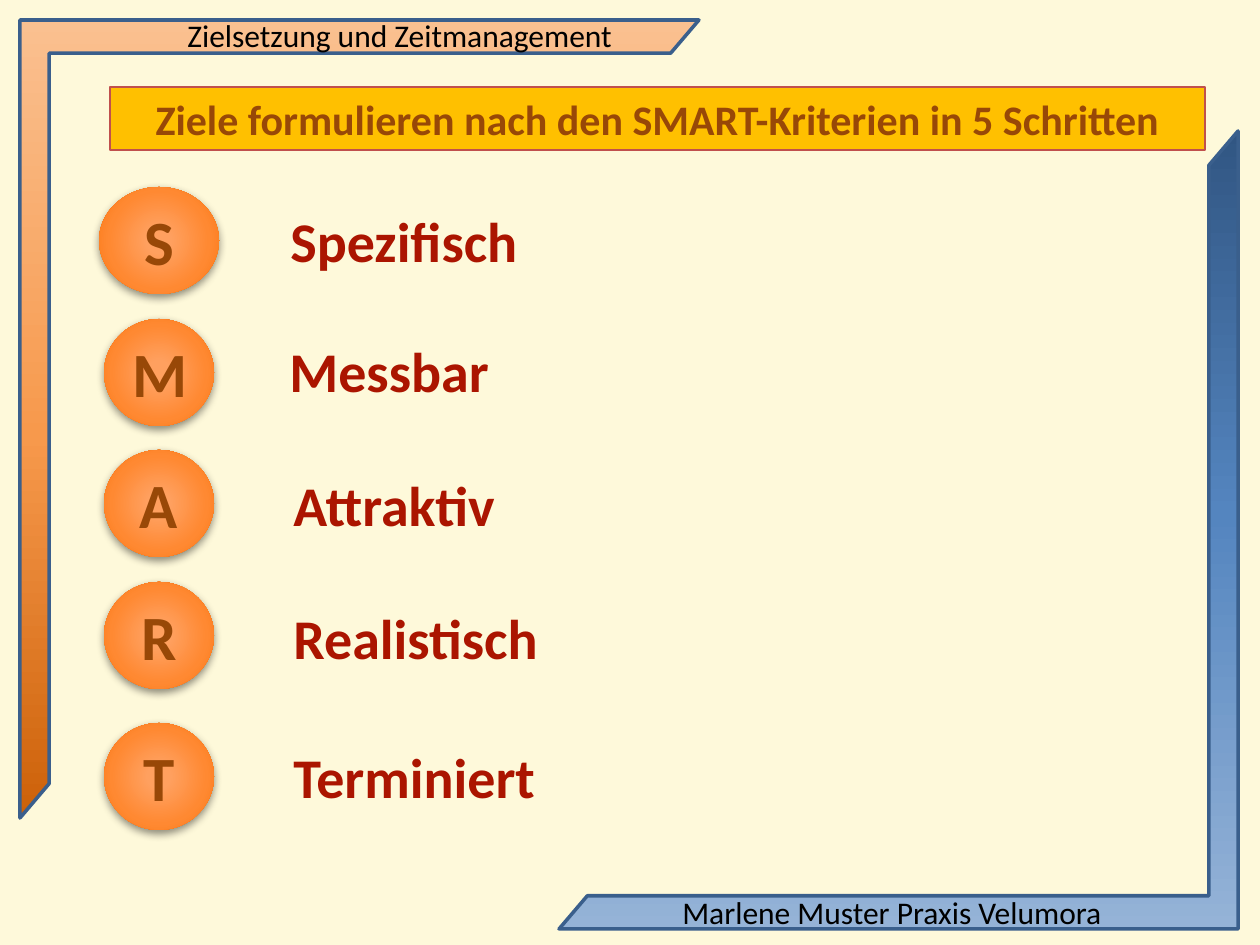
from lxml import etree
from pptx import Presentation
from pptx import util as u
from pptx.dml.color import RGBColor
from pptx.enum import shapes, text
from pptx.oxml import ns

PX = 914400 / 126
FONT = "Calibri"
CREAM, BLACK, BROWN, RED = "FEF9DA", "000000", "984807", "AB1500"
FRAME_LINE = "3A5F8C"
ORANGE_FADE = [(0, "CC6109"), (48, "F7994C"), (100, "FAC090")]
BLUE_FADE = [(0, "315683"), (48, "5485BF"), (100, "95B3D7")]
BALL_FADE = [(0, "FFA061"), (15, "FFA05F"), (62, "FF8932"),
             (97, "FA7712"), (100, "FB7507")]


def px(*lengths):
    return [u.Emu(round(length * PX)) for length in lengths]


def color(value):
    return RGBColor.from_string(value)


def add_xml(parent, tag, **attributes):
    child = etree.SubElement(parent, ns.qn(tag))
    for name, value in attributes.items():
        child.set(name, str(value))
    return child


def write(shape, words, size, tint, bold=False, align=text.PP_ALIGN.LEFT,
          anchor=text.MSO_ANCHOR.TOP, wrap=True):
    frame = shape.text_frame
    frame.word_wrap = wrap
    frame.vertical_anchor = anchor
    paragraph = frame.paragraphs[0]
    paragraph.alignment = align
    run = paragraph.add_run()
    run.text = words
    run.font.name, run.font.size, run.font.bold = FONT, u.Pt(size), bold
    run.font.color.rgb = color(tint)


def fade(shape, stops, radial=False):
    """Fill from bottom to top, or from the centre outwards."""
    shape.fill.background()
    properties = shape.element.spPr
    old = properties.find(ns.qn("a:noFill"))
    gradient = etree.Element(ns.qn("a:gradFill"), rotWithShape="1")
    properties.replace(old, gradient)
    stop_list = add_xml(gradient, "a:gsLst")
    for position, tint in stops:
        stop = add_xml(stop_list, "a:gs", pos=position * 1000)
        add_xml(stop, "a:srgbClr", val=tint)
    if radial:
        circle = add_xml(gradient, "a:path", path="circle")
        add_xml(circle, "a:fillToRect", l=50000, t=50000, r=50000, b=50000)
    else:
        add_xml(gradient, "a:lin", ang=270 * 60000, scaled=0)


def drop_shadow(shape):
    effects = shape.element.spPr.find(ns.qn("a:effectLst"))
    shadow = add_xml(effects, "a:outerShdw", blurRad=u.Pt(5), dist=u.Pt(2),
                     dir=90 * 60000, rotWithShape=0)
    tint = add_xml(shadow, "a:srgbClr", val=BLACK)
    add_xml(tint, "a:alpha", val=43000)


class SlideBuilder:
    """Holds the current slide and draws its elements in one style."""

    def __init__(self, presentation):
        self.slide = presentation.slides.add_slide(presentation.slide_layouts[6])
        background = self.slide.background.fill
        background.solid()
        background.fore_color.rgb = color(CREAM)

    def shape(self, kind, box, line=None, width=1):
        shape = self.slide.shapes.add_shape(kind, *px(*box))
        shape.shadow.inherit = False
        if line:
            shape.line.color.rgb = color(line)
            shape.line.width = u.Pt(width)
        else:
            shape.line.fill.background()
        return shape

    def corner(self, left, top, stops, rotation=0):
        frame = self.shape(shapes.MSO_SHAPE.HALF_FRAME, (left, top, 679, 798),
                           FRAME_LINE, 2)
        frame.adjustments[0], frame.adjustments[1] = 0.049, 0.043
        frame.rotation = rotation
        fade(frame, stops)

    def label(self, words, box, size, tint, bold=False):
        label = self.slide.shapes.add_textbox(*px(*box))
        write(label, words, size, tint, bold, wrap=False)

    def title(self, words):
        bar = self.shape(shapes.MSO_SHAPE.RECTANGLE, (110, 87, 1095, 63),
                         "C0504D", 1.25)
        bar.fill.solid()
        bar.fill.fore_color.rgb = color("FFC000")
        write(bar, words, 24, BROWN, True, text.PP_ALIGN.CENTER)

    def ball(self, letter, center, top, width):
        ball = self.shape(shapes.MSO_SHAPE.OVAL,
                          (center - width / 2, top, width, 107))
        fade(ball, BALL_FADE, radial=True)
        drop_shadow(ball)
        write(ball, letter, 36, BROWN, True, text.PP_ALIGN.CENTER,
              text.MSO_ANCHOR.MIDDLE)


def main():
    presentation = Presentation()
    presentation.slide_width, presentation.slide_height = px(1260, 945)
    builder = SlideBuilder(presentation)

    builder.corner(20, 20, ORANGE_FADE)
    builder.corner(559, 131, BLUE_FADE, rotation=180)
    builder.label("Zielsetzung und Zeitmanagement", (175, 10, 455, 50), 18, BLACK)
    builder.label("Marlene Muster Praxis Velumora", (670, 887, 456, 50), 18, BLACK)
    builder.title("Ziele formulieren nach den SMART-Kriterien in 5 Schritten")

    # word, top of ball, width of ball, then left, top and width of the word
    criteria = [
        ("Spezifisch", 187, 120, 278, 200, 255),
        ("Messbar", 319, 110, 277, 330, 227),
        ("Attraktiv", 450, 110, 281, 464, 231),
        ("Realistisch", 582, 110, 281, 597, 272),
        ("Terminiert", 723, 110, 281, 736, 270),
    ]
    for word, ball_top, ball_width, left, top, width in criteria:
        builder.ball(word[0], 159, ball_top, ball_width)
        builder.label(word, (left, top, width, 81), 32, RED, bold=True)

    presentation.save("out.pptx")


if __name__ == "__main__":
    main()
